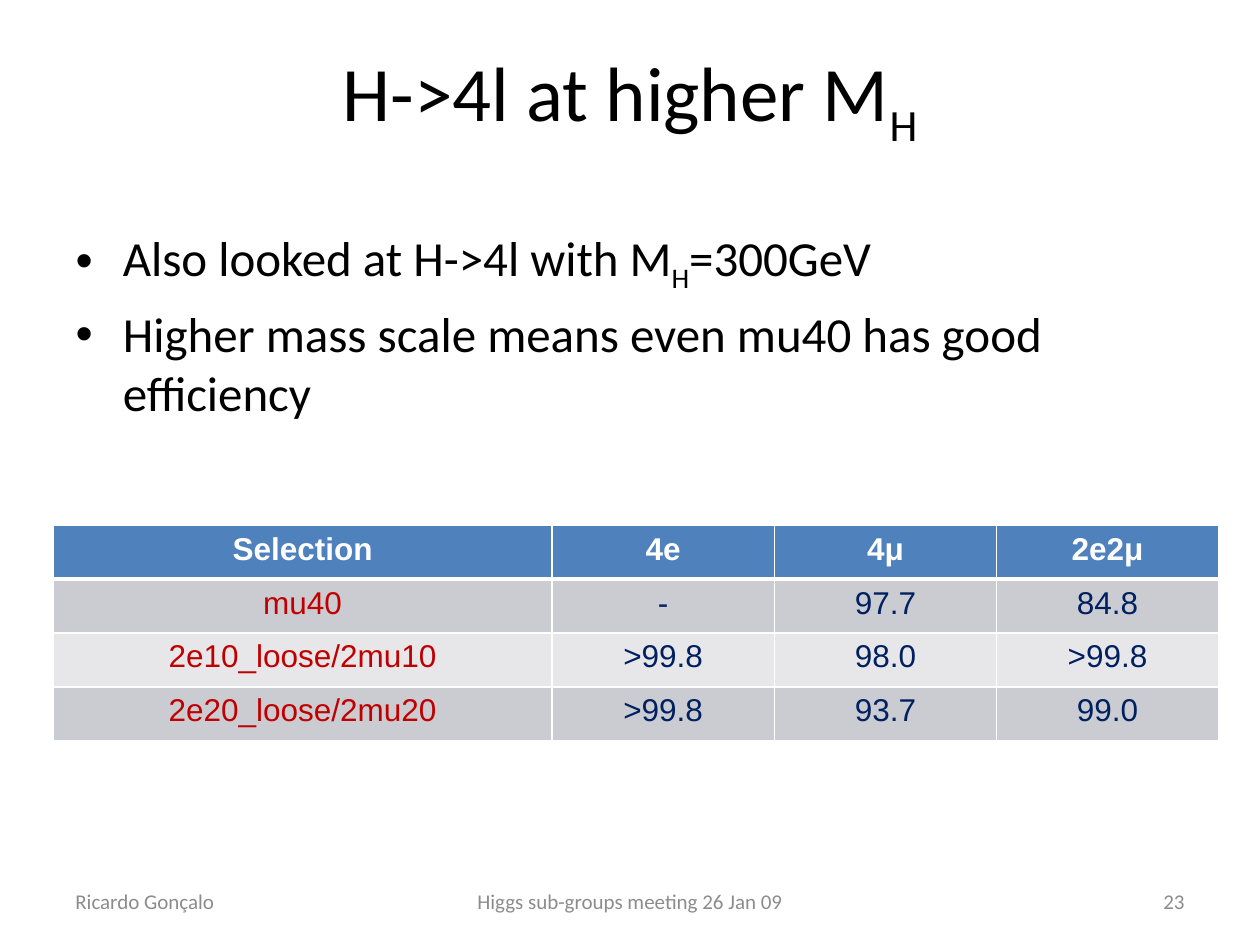
from lxml.etree import SubElement
from pptx import Presentation
from pptx.dml.color import RGBColor
from pptx.enum.text import MSO_ANCHOR, PP_ALIGN
from pptx.oxml.ns import qn
from pptx.util import Cm, Pt

COLORS = {
    "text": "000000", "footer": "8C8C8C", "line": "FFFFFF",
    "header": "4F81BD", "header_text": "FFFFFF",
    "band_dark": "CBCCD2", "band_light": "E7E7EA",
    "selection": "C00000", "value": "002060",
}
TITLE_FONT = {"name": "Calibri", "size": Pt(44)}
BODY_FONT = {"name": "Calibri", "size": Pt(28)}
FOOTER_FONT = {"name": "Calibri", "size": Pt(12)}
CELL_FONT = {"name": "Arial", "size": Pt(18), "bold": False}
HEADER_FONT = {**CELL_FONT, "bold": True}

TITLE = ["H->4l at higher M", "H"]
BULLETS = [
    ["Also looked at H->4l with M", "H", "=300GeV"],
    ["Higher mass scale means even mu40 has good efficiency"],
]
ROWS = [
    ["Selection", "4e", "4μ", "2e2μ"],
    ["mu40", "-", "97.7", "84.8"],
    ["2e10_loose/2mu10", ">99.8", "98.0", ">99.8"],
    ["2e20_loose/2mu20", ">99.8", "93.7", "99.0"],
]


def rgb(name):
    return RGBColor.from_string(COLORS[name])


def write(para, pieces, font, color):
    """Add the pieces as runs; every second piece is a subscript."""
    for index, piece in enumerate(pieces):
        span = para.add_run()
        span.text = piece
        for key, value in font.items():
            setattr(span.font, key, value)
        span.font.color.rgb = rgb(color)
        if index % 2:
            span._r.get_or_add_rPr().set("baseline", "-25000")


def place(shape, box):
    for key, value in zip(("left", "top", "width", "height"), box):
        setattr(shape, key, Cm(value))


def add_title(page, box):
    title = page.shapes.title
    place(title, box)
    title.text_frame.vertical_anchor = MSO_ANCHOR.MIDDLE
    write(title.text_frame.paragraphs[0], TITLE, TITLE_FONT, "text")


def add_bullets(page, box):
    body = page.placeholders[1]
    place(body, box)
    frame = body.text_frame
    for index, pieces in enumerate(BULLETS):
        para = frame.add_paragraph() if index else frame.paragraphs[0]
        write(para, pieces, BODY_FONT, "text")


def set_borders(cell, widths):
    properties = cell._tc.get_or_add_tcPr()
    for side, width in widths.items():
        line = SubElement(properties, qn(f"a:ln{side}"), w=str(Pt(width)))
        fill = SubElement(line, qn("a:solidFill"))
        SubElement(fill, qn("a:srgbClr"), val=COLORS["line"])


def add_results(page, box):
    left, top, width, height = box
    table = page.shapes.add_table(
        len(ROWS), len(ROWS[0]), Cm(left), Cm(top), Cm(width), Cm(height)).table
    first_width = 10.06
    value_width = (width - first_width) / (len(ROWS[0]) - 1)
    for index, column in enumerate(table.columns):
        column.width = Cm(value_width if index else first_width)
    for row, texts in enumerate(ROWS):
        band = ("band_dark" if row % 2 else "band_light") if row else "header"
        for column, text in enumerate(texts):
            cell = table.cell(row, column)
            set_borders(cell, {"L": 1, "R": 1, "T": 3 if row == 1 else 1,
                               "B": 1 if row else 3})
            cell.fill.solid()
            cell.fill.fore_color.rgb = rgb(band)
            color = ("value" if column else "selection") if row else "header_text"
            para = cell.text_frame.paragraphs[0]
            para.alignment = PP_ALIGN.CENTER
            write(para, [text], CELL_FONT if row else HEADER_FONT, color)


def add_footer(page, box):
    left, top, width, height = box
    side, middle = 5.93, 8.04
    parts = [
        ("Ricardo Gonçalo", left, side, PP_ALIGN.LEFT),
        ("Higgs sub-groups meeting 26 Jan 09", left + (width - middle) / 2,
         middle, PP_ALIGN.CENTER),
        ("23", left + width - side, side, PP_ALIGN.RIGHT),
    ]
    for text, part_left, part_width, alignment in parts:
        frame = page.shapes.add_textbox(
            Cm(part_left), Cm(top), Cm(part_width), Cm(height)).text_frame
        frame.word_wrap = True
        frame.vertical_anchor = MSO_ANCHOR.MIDDLE
        frame.paragraphs[0].alignment = alignment
        write(frame.paragraphs[0], [text], FOOTER_FONT, "footer")


def main():
    deck = Presentation()
    deck.slide_width, deck.slide_height = Cm(25.4), Cm(19.05)
    page = deck.slides.add_slide(deck.slide_layouts[1])
    add_title(page, (1.27, 0.76, 22.86, 2.41))
    add_bullets(page, (1.27, 4.45, 22.86, 4.24))
    add_footer(page, (1.27, 17.65, 22.86, 1.02))
    add_results(page, (1.07, 10.59, 23.5, 4.34))
    deck.save("out.pptx")


if __name__ == "__main__":
    main()
